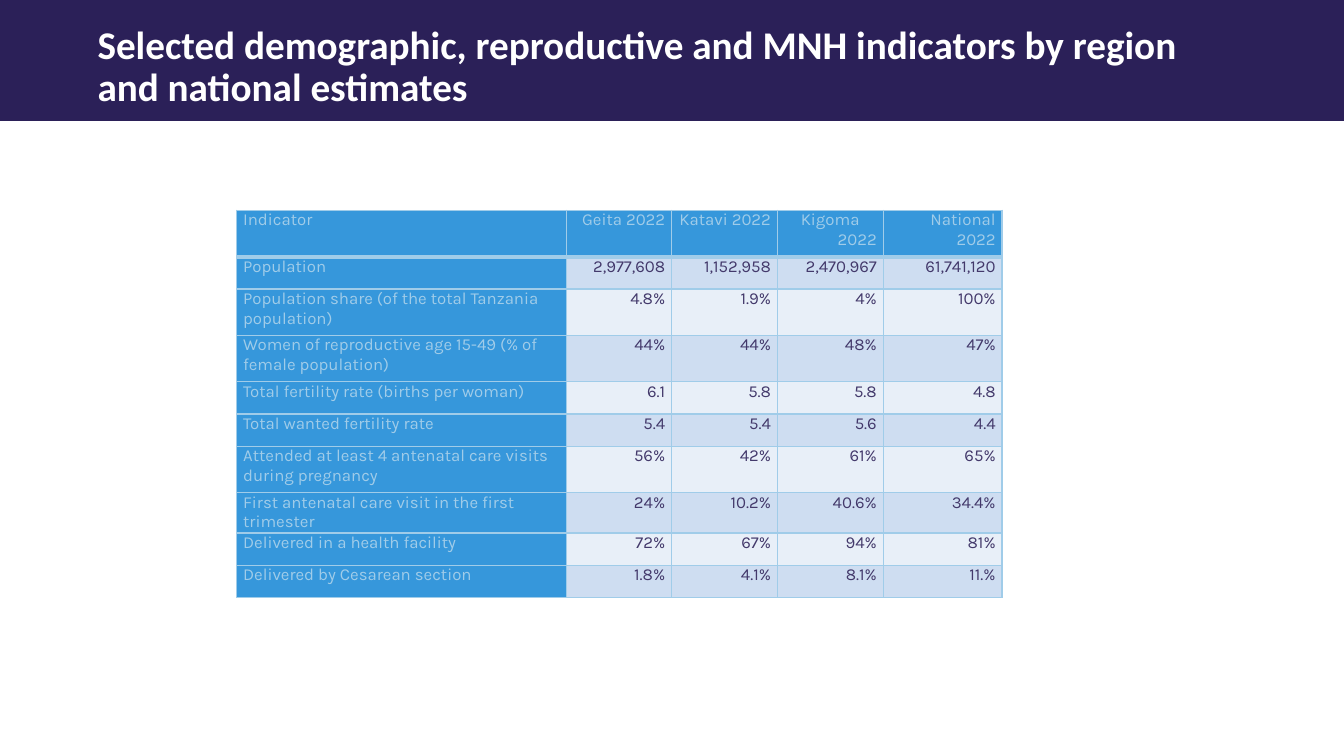
"""Build the slide of demographic, reproductive and MNH indicators by region."""
from lxml import etree
from pptx import Presentation
from pptx import util as u
from pptx.dml.color import RGBColor
from pptx.enum import shapes, text
from pptx.oxml import ns

Pt = u.Pt
ALIGN = text.PP_ALIGN
COLOURS = {
    "banner": "2B2058",
    "title": "FFFFFF",
    "heading": "3697DB",
    "pale": "A0CCE9",
    "figure": "43396B",
    "odd": "CEDDF1",
    "even": "E8EFF8",
}
TITLE = ("Selected demographic, reproductive and MNH indicators by region "
         "and national estimates")
INDICATORS = [
    ("Indicator", "Geita 2022", "Katavi 2022", "Kigoma\n2022", "National 2022"),
    ("Population", "2,977,608", "1,152,958", "2,470,967", "61,741,120"),
    ("Population share (of the total Tanzania population)",
     "4.8%", "1.9%", "4%", "100%"),
    ("Women of reproductive age 15-49 (% of female population)",
     "44%", "44%", "48%", "47%"),
    ("Total fertility rate (births per woman)", "6.1", "5.8", "5.8", "4.8"),
    ("Total wanted fertility rate", "5.4", "5.4", "5.6", "4.4"),
    ("Attended at least 4 antenatal care visits during pregnancy",
     "56%", "42%", "61%", "65%"),
    ("First antenatal care visit in the first trimester",
     "24%", "10.2%", "40.6%", "34.4%"),
    ("Delivered in a health facility", "72%", "67%", "94%", "81%"),
    ("Delivered by Cesarean section", "1.8%", "4.1%", "8.1%", "11.%"),
]
COLUMN_WIDTHS = [235.3, 75.2, 75.6, 75.6, 84.9]
ROW_HEIGHTS = [33.2, 23, 33.2, 33.2, 23, 23, 33.2, 28.8, 23, 23]


def colour(name):
    """Return the named colour."""
    return RGBColor.from_string(COLOURS[name])


def style_para(para, font_name, size, colour_name, bold=False):
    """Format every run of a paragraph."""
    for span in para.runs:
        span.font.name = font_name
        span.font.size = Pt(size)
        span.font.bold = bold
        span.font.color.rgb = colour(colour_name)


def add_banner(page, width):
    """Add the dark band across the top."""
    banner = page.shapes.add_shape(
        shapes.MSO_SHAPE.RECTANGLE, 0, 0, width, Pt(86.4))
    banner.shadow.inherit = False
    banner.fill.solid()
    banner.fill.fore_color.rgb = colour("banner")
    banner.line.fill.background()


def add_title(page):
    """Add the slide title over the banner."""
    box = page.shapes.add_textbox(Pt(62.6), Pt(18), Pt(790.6), Pt(61.2))
    frame = box.text_frame
    frame.word_wrap = True
    frame.margin_top = frame.margin_bottom = 0
    frame.vertical_anchor = text.MSO_ANCHOR.MIDDLE
    frame.text = TITLE
    para = frame.paragraphs[0]
    para.line_spacing = 0.9
    style_para(para, "Calibri", 28, "title", bold=True)


def set_borders(cell, bottom):
    """Draw the four cell borders, with the given bottom width."""
    properties = cell._tc.get_or_add_tcPr()
    for side, width in (("L", 1), ("R", 1), ("T", 1), ("B", bottom)):
        line = etree.SubElement(
            properties, ns.qn(f"a:ln{side}"), w=str(int(Pt(width))))
        fill = etree.SubElement(line, ns.qn("a:solidFill"))
        etree.SubElement(fill, ns.qn("a:srgbClr"), val=COLOURS["pale"])


def fill_cell(cell, content, row, column):
    """Write and format one table cell according to its place."""
    is_heading = row == 0 or column == 0
    set_borders(cell, 3 if row == 0 else 1)
    cell.fill.solid()
    band = "odd" if row % 2 else "even"
    cell.fill.fore_color.rgb = colour("heading" if is_heading else band)
    cell.margin_left = cell.margin_right = Pt(4.5)
    cell.margin_top = cell.margin_bottom = 0
    cell.text_frame.text = content
    for para in cell.text_frame.paragraphs:
        para.alignment = ALIGN.RIGHT if column else ALIGN.LEFT
        style_para(para, "Karla", 12, "pale" if is_heading else "figure")
    if len(cell.text_frame.paragraphs) > 1:
        cell.text_frame.paragraphs[0].alignment = ALIGN.CENTER


def add_indicator_table(page):
    """Add the table of indicators by region."""
    table = page.shapes.add_table(
        len(INDICATORS), len(COLUMN_WIDTHS), Pt(169.2), Pt(150.2),
        Pt(sum(COLUMN_WIDTHS)), Pt(sum(ROW_HEIGHTS))).table
    table.first_row = table.horz_banding = False
    for column, width in zip(table.columns, COLUMN_WIDTHS):
        column.width = Pt(width)
    for row, height in zip(table.rows, ROW_HEIGHTS):
        row.height = Pt(height)
    for row, values in enumerate(INDICATORS):
        for column, content in enumerate(values):
            fill_cell(table.cell(row, column), content, row, column)


def main():
    """Build and save the deck."""
    deck = Presentation()
    deck.slide_width, deck.slide_height = Pt(960), Pt(540)
    page = deck.slides.add_slide(deck.slide_layouts[6])
    add_banner(page, deck.slide_width)
    add_title(page)
    add_indicator_table(page)
    deck.save("out.pptx")


if __name__ == "__main__":
    main()
